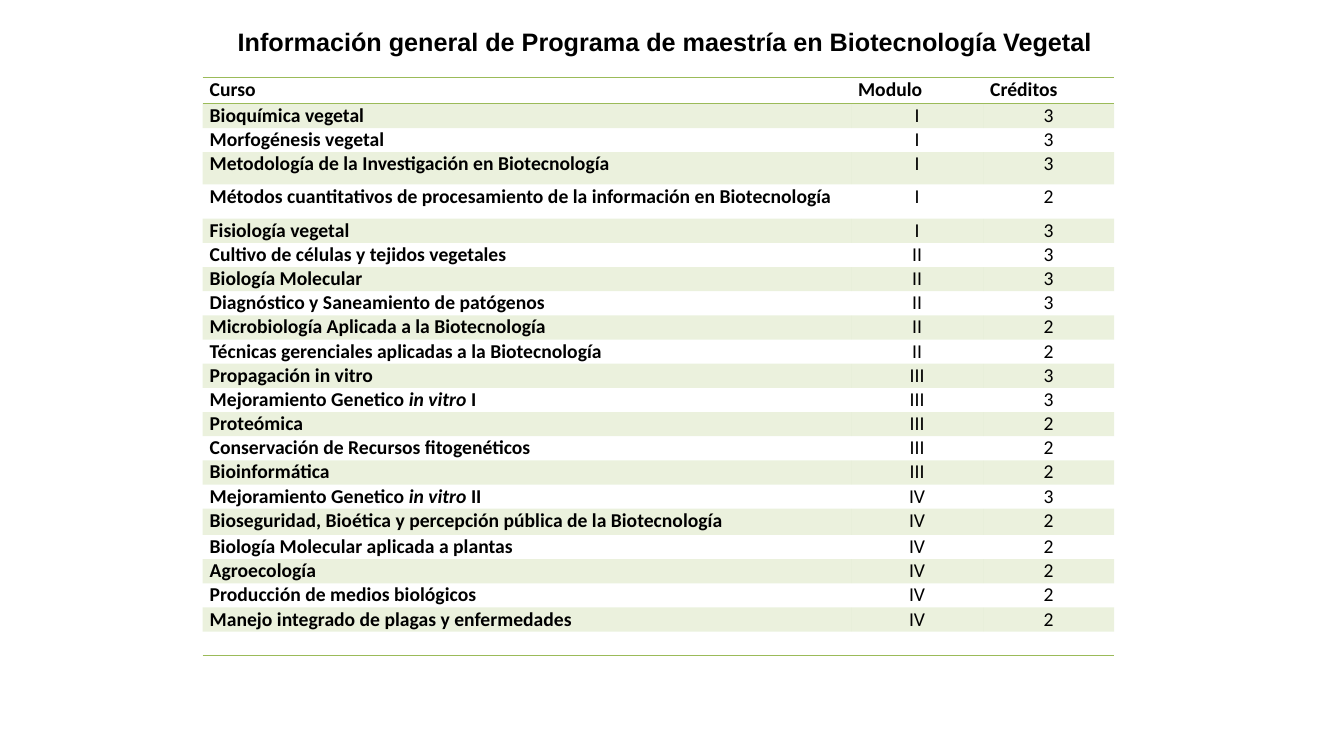
from dataclasses import dataclass

from lxml.etree import SubElement
from pptx import Presentation
from pptx.dml.color import RGBColor
from pptx.enum.text import MSO_ANCHOR as Anchor, PP_ALIGN as Align
from pptx.oxml.ns import qn
from pptx.util import Emu, Inches, Pt

SLIDE_WIDTH, SLIDE_HEIGHT = Inches(13.33), Inches(7.5)
BLACK, GREEN = "000000", "9BBB59"
PLAIN_STYLE = "{2D5ABB26-0587-4C30-8999-92F81FD0307C}"

# Lengths are percentages of the slide's width or height
COLUMN_SHARES = (48.24, 9.83, 9.75)
ROW_SHARE = 3.2


@dataclass(frozen=True)
class Course:
    name: str
    module: str
    credits: int
    row_share: float = ROW_SHARE
    italic: str = ""
    ending: str = ""


HEADINGS = ("Curso", "Modulo", "Créditos")
HEADING_SHARE = 3.47
COURSES = (
    Course("Bioquímica vegetal", "I", 3),
    Course("Morfogénesis vegetal", "I", 3),
    Course("Metodología de la Investigación en Biotecnología", "I", 3, 4.27),
    Course("Métodos cuantitativos de procesamiento de la información en Biotecnología",
           "I", 2, 4.53),
    Course("Fisiología vegetal", "I", 3),
    Course("Cultivo de células y tejidos vegetales", "II", 3),
    Course("Biología Molecular", "II", 3),
    Course("Diagnóstico y Saneamiento de patógenos", "II", 3),
    Course("Microbiología Aplicada a la Biotecnología", "II", 2),
    Course("Técnicas gerenciales aplicadas a la Biotecnología", "II", 2),
    Course("Propagación in vitro", "III", 3),
    Course("Mejoramiento Genetico ", "III", 3, italic="in vitro ", ending="I"),
    Course("Proteómica", "III", 2),
    Course("Conservación de Recursos fitogenéticos", "III", 2),
    Course("Bioinformática", "III", 2),
    Course("Mejoramiento Genetico ", "IV", 3, italic="in vitro ", ending="II"),
    Course("Bioseguridad, Bioética y percepción pública de la Biotecnología ",
           "IV", 2, 3.47),
    Course("Biología Molecular aplicada a plantas", "IV", 2),
    Course("Agroecología", "IV", 2),
    Course("Producción de medios biológicos", "IV", 2),
    Course("Manejo integrado de plagas y enfermedades", "IV", 2),
)


def across(share: float) -> Emu:
    return Emu(round(SLIDE_WIDTH * share / 100))


def down(share: float) -> Emu:
    return Emu(round(SLIDE_HEIGHT * share / 100))


def color(hex_code: str) -> RGBColor:
    return RGBColor.from_string(hex_code)


def add_run(paragraph, words: str, size: float, font: str,
            bold: bool = False, italic: bool = False) -> None:
    run = paragraph.add_run()
    run.text = words
    run.font.size, run.font.name = Pt(size), font
    run.font.bold, run.font.italic = bold, italic
    run.font.color.rgb = color(BLACK)


def write_cell(cell, words: str, align: Align, bold: bool,
               italic: str = "", ending: str = "") -> None:
    paragraph = cell.text_frame.paragraphs[0]
    paragraph.alignment = align
    for part, slanted in ((words, False), (italic, True), (ending, False)):
        if part:
            add_run(paragraph, part, 14, "Calibri", bold, slanted)


def prepare_cell(cell, shaded: bool) -> None:
    cell.margin_left = cell.margin_right = Inches(0.07)
    cell.margin_top = cell.margin_bottom = 0
    cell.vertical_anchor = Anchor.TOP
    if not shaded:
        cell.fill.background()
        return
    cell.fill.solid()
    cell.fill.fore_color.rgb = color(GREEN)
    for tint in cell.fill.fore_color._xFill.iter(qn("a:srgbClr")):
        SubElement(tint, qn("a:alpha"), val="20000")


def rule_cell(cell, *edges: str) -> None:
    properties = cell._tc.get_or_add_tcPr()
    for position, edge in enumerate(edges):
        line = SubElement(properties, qn(f"a:{edge}"), w=str(Pt(1)))
        paint = SubElement(line, qn("a:solidFill"))
        SubElement(paint, qn("a:srgbClr"), val=GREEN)
        properties.insert(position, line)


def add_course_table(slide) -> None:
    row_shares = (HEADING_SHARE, *(course.row_share for course in COURSES), ROW_SHARE)
    frame = slide.shapes.add_table(
        len(row_shares), len(COLUMN_SHARES), across(15.08), down(10.27),
        across(sum(COLUMN_SHARES)), down(sum(row_shares)))
    for style in frame.element.iter(qn("a:tableStyleId")):
        style.text = PLAIN_STYLE
    table = frame.table
    table.first_row = table.horz_banding = False
    for column, share in zip(table.columns, COLUMN_SHARES):
        column.width = across(share)
    closing = len(row_shares) - 1
    for index, (row, share) in enumerate(zip(table.rows, row_shares)):
        row.height = down(share)
        for cell in row.cells:
            prepare_cell(cell, shaded=index % 2 == 1 and index < closing)

    # Heading row
    for cell, heading in zip(table.rows[0].cells, HEADINGS):
        write_cell(cell, heading, Align.JUSTIFY, True)
        rule_cell(cell, "lnT", "lnB")

    # One row per course
    for index, course in enumerate(COURSES, start=1):
        name, module, credit = table.rows[index].cells
        write_cell(name, course.name, Align.JUSTIFY, True, course.italic, course.ending)
        write_cell(module, course.module, Align.CENTER, False)
        write_cell(credit, str(course.credits), Align.CENTER, False)

    # Empty closing row, kept low by a small paragraph mark
    for cell in table.rows[closing].cells:
        SubElement(cell.text_frame.paragraphs[0]._p, qn("a:endParaRPr"), sz="1400")
        rule_cell(cell, "lnB")


def add_heading(slide) -> None:
    heading = slide.shapes.add_textbox(across(16.95), down(2.8), across(73.59), down(9.47))
    heading.text_frame.word_wrap = True
    add_run(heading.text_frame.paragraphs[0],
            "Información general de Programa de maestría en Biotecnología Vegetal",
            18, "Arial", bold=True)


def main() -> None:
    deck = Presentation()
    deck.slide_width, deck.slide_height = SLIDE_WIDTH, SLIDE_HEIGHT
    slide = deck.slides.add_slide(deck.slide_layouts[6])
    add_course_table(slide)
    add_heading(slide)
    deck.save("out.pptx")


if __name__ == "__main__":
    main()
